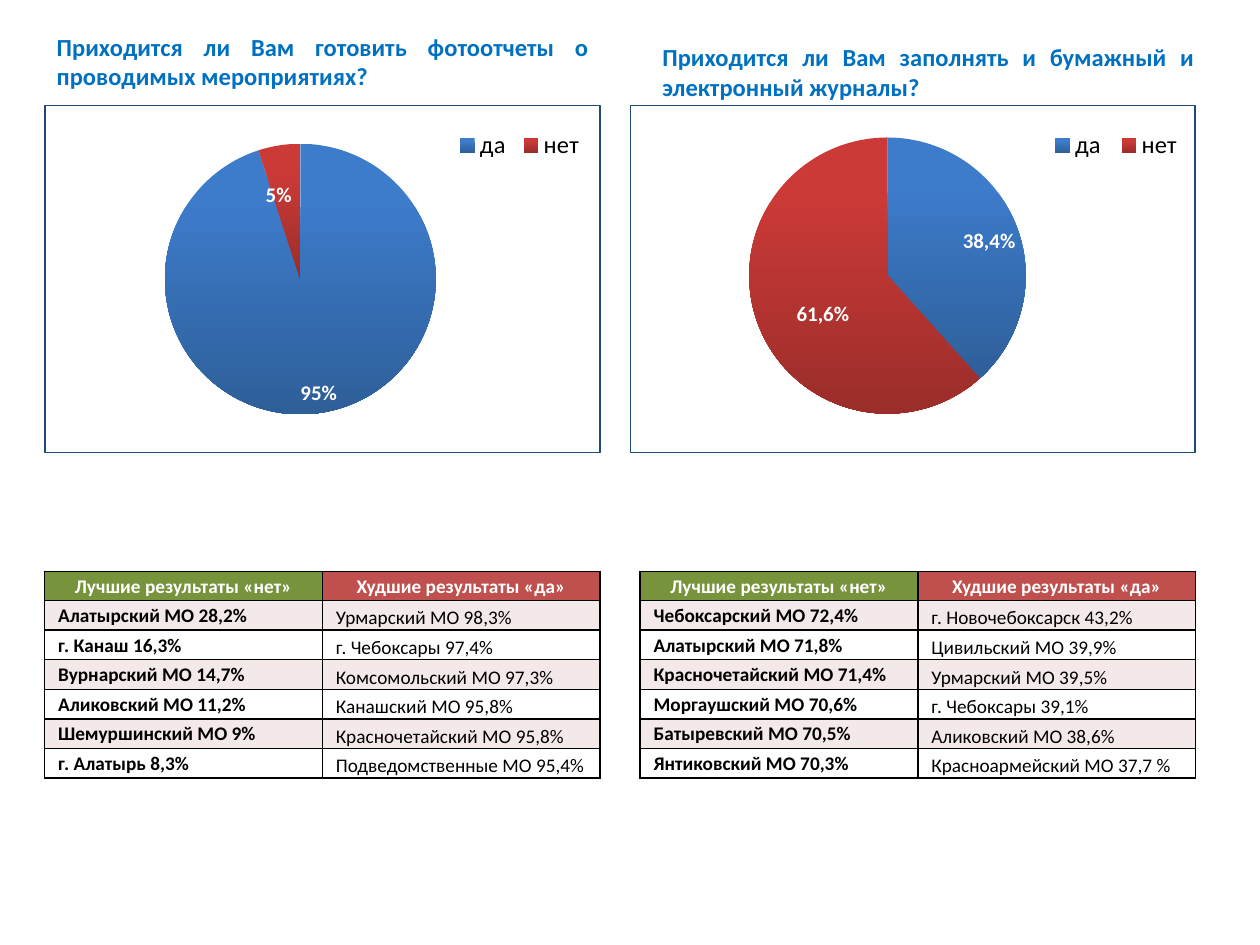
from lxml import etree
from pptx import Presentation
from pptx.chart.data import CategoryChartData
from pptx.dml.color import RGBColor
from pptx.enum.chart import XL_CHART_TYPE, XL_LABEL_POSITION, XL_LEGEND_POSITION
from pptx.enum.text import PP_ALIGN
from pptx.oxml import parse_xml
from pptx.oxml.ns import nsdecls, qn
from pptx.util import Pt

PIE = XL_CHART_TYPE.PIE
LABEL_POSITIONS = (XL_LABEL_POSITION.INSIDE_END, XL_LABEL_POSITION.CENTER)
LEGEND_TOP = XL_LEGEND_POSITION.TOP
JUSTIFY, CENTER, LEFT = PP_ALIGN.JUSTIFY, PP_ALIGN.CENTER, PP_ALIGN.LEFT

BLACK = RGBColor(0x00, 0x00, 0x00)
WHITE = RGBColor(0xFF, 0xFF, 0xFF)
TITLE_BLUE = RGBColor(0x00, 0x70, 0xC0)
BORDER_BLUE = RGBColor(0x1F, 0x49, 0x7D)
GREEN = RGBColor(0x77, 0x93, 0x3C)
RED = RGBColor(0xC0, 0x50, 0x4D)
BAND = RGBColor(0xF4, 0xE9, 0xE9)
SLICE_GRADIENTS = [
    (RGBColor(0x3D, 0x7B, 0xCB), RGBColor(0x2E, 0x5F, 0x99)),
    (RGBColor(0xCB, 0x3A, 0x37), RGBColor(0x9B, 0x2D, 0x2A)),
]


class SlideBuilder:
    def __init__(self, slide, font_name):
        self.slide = slide
        self.font_name = font_name

    def style_font(self, font, size, color, bold=False):
        font.name = self.font_name
        font.size = Pt(size)
        font.bold = bold
        font.color.rgb = color

    def add_run(self, paragraph, text, size, color, bold=False):
        run = paragraph.add_run()
        run.text = text
        self.style_font(run.font, size, color, bold)

    def add_title(self, left, top, text):
        shape = self.slide.shapes.add_textbox(Pt(left), Pt(top), Pt(318.2), Pt(50.4))
        shape.text_frame.word_wrap = True
        paragraph = shape.text_frame.paragraphs[0]
        paragraph.alignment = JUSTIFY
        self.add_run(paragraph, text, 14, TITLE_BLUE, True)

    def add_pie(self, left, width, values, number_format, plot, legend, offsets, texts=None):
        """Label with the given texts, or with computed percentages."""
        data = CategoryChartData(number_format=number_format.rstrip("%"))
        data.categories = ["да", "нет"]
        data.add_series("Series 1", values)
        chart = self.slide.shapes.add_chart(
            PIE, Pt(left), Pt(60), Pt(width), Pt(199), data).chart
        chart.has_title = False
        self.style_font(chart.font, 18, BLACK)
        chart.has_legend = True
        chart.legend.position = LEGEND_TOP
        chart.legend.include_in_layout = False
        self.style_font(chart.legend.font, 14, BLACK)

        series = chart.plots[0].series[0]
        labels = series.data_labels
        labels.show_percentage = True
        labels.show_value = False
        labels.number_format = number_format
        labels.number_format_is_linked = False
        self.style_font(labels.font, 12, WHITE, True)
        for index, (start, end) in enumerate(SLICE_GRADIENTS):
            point = series.points[index]
            fill = point.format.fill
            fill.gradient()
            fill.gradient_angle = 270
            for stop, color, place in zip(fill.gradient_stops, (start, end), (0.2, 1)):
                stop.color.rgb = color
                stop.position = place
            label = point.data_label
            if texts:
                paragraph = label.text_frame.paragraphs[0]
                self.add_run(paragraph, texts[index], 12, WHITE, True)
            else:
                self.style_font(label.font, 12, WHITE, True)
            label.position = LABEL_POSITIONS[index]

        space = chart.element
        for label, offset in zip(space.iter(qn("c:dLbl")), offsets):
            label.find(qn("c:showVal")).set("val", "0")
            label.find(qn("c:showPercent")).set("val", "1")
            self.set_layout(label, 1, zip("xy", offset))
        edges = [("xMode", "edge"), ("yMode", "edge")]
        plot_area = next(space.iter(qn("c:plotArea")))
        self.set_layout(plot_area, 0, [("layoutTarget", "inner"), *edges, *zip("xywh", plot)])
        legend_element = next(space.iter(qn("c:legend")))
        self.set_layout(legend_element, 1, [*edges, *zip("xywh", legend)])
        space.find(qn("c:chart")).addnext(parse_xml(
            f'<c:spPr {nsdecls("c", "a")}><a:noFill/><a:ln w="{Pt(0.75)}"><a:solidFill>'
            f'<a:srgbClr val="{BORDER_BLUE}"/></a:solidFill></a:ln></c:spPr>'))

    def set_layout(self, element, index, settings):
        """Give a chart part a manual layout, as its child at index."""
        for old in element.findall(qn("c:layout")):
            element.remove(old)
        layout = parse_xml(f'<c:layout {nsdecls("c")}><c:manualLayout/></c:layout>')
        for name, value in settings:
            etree.SubElement(layout[0], qn(f"c:{name}")).set("val", str(value))
        element.insert(index, layout)

    def add_table(self, left, top, width, height, rows):
        table = self.slide.shapes.add_table(
            len(rows), 2, Pt(left), Pt(top), Pt(width), Pt(height)).table
        for row_index, row in enumerate(rows):
            for column_index, text in enumerate(row):
                cell = table.cell(row_index, column_index)
                header, best = row_index == 0, column_index == 0
                if header:
                    fill = GREEN if best else RED
                else:
                    fill = BAND if row_index % 2 else WHITE
                cell.fill.solid()
                cell.fill.fore_color.rgb = fill
                cell.margin_left = Pt(5.2 if header else 7.7)
                cell.margin_right = Pt(5.2)
                cell.margin_top = Pt(0 if header or best else 0.7)
                cell.margin_bottom = 0
                paragraph = cell.text_frame.paragraphs[0]
                paragraph.alignment = CENTER if header else LEFT
                paragraph.line_spacing = 1.15 if header or best else Pt(16.2)
                self.add_run(paragraph, text, 11, WHITE if header else BLACK, header or best)
                self.add_borders(cell)

    def add_borders(self, cell):
        properties = cell._tc.get_or_add_tcPr()
        for index, side in enumerate(("lnL", "lnR", "lnT", "lnB")):
            properties.insert(index, parse_xml(
                f'<a:{side} {nsdecls("a")} w="{Pt(1)}"><a:solidFill>'
                f'<a:srgbClr val="{BLACK}"/></a:solidFill></a:{side}>'))


HEADER = ("Лучшие результаты «нет»", "Худшие результаты «да»")
PHOTO_ROWS = [
    HEADER,
    ("Алатырский МО 28,2%", "Урмарский МО 98,3%"),
    ("г. Канаш 16,3%", "г. Чебоксары 97,4%"),
    ("Вурнарский МО 14,7%", "Комсомольский МО 97,3%"),
    ("Аликовский МО 11,2%", "Канашский МО 95,8%"),
    ("Шемуршинский МО 9%", "Красночетайский МО 95,8%"),
    ("г. Алатырь 8,3%", "Подведомственные МО 95,4%"),
]
JOURNAL_ROWS = [
    HEADER,
    ("Чебоксарский МО 72,4%", "г. Новочебоксарск 43,2%"),
    ("Алатырский МО 71,8%", "Цивильский МО 39,9%"),
    ("Красночетайский МО 71,4%", "Урмарский МО 39,5%"),
    ("Моргаушский МО 70,6%", "г. Чебоксары 39,1%"),
    ("Батыревский МО 70,5%", "Аликовский МО 38,6%"),
    ("Янтиковский МО 70,3%", "Красноармейский МО 37,7 %"),
]


def main():
    presentation = Presentation()
    presentation.slide_width, presentation.slide_height = Pt(720), Pt(540)
    slide = presentation.slides.add_slide(presentation.slide_layouts[6])
    builder = SlideBuilder(slide, "Calibri")

    builder.add_title(25.3, 14.8, "Приходится ли Вам готовить фотоотчеты о проводимых мероприятиях?")
    builder.add_pie(25.3, 318, (95, 5), "0%", (0.21, 0.11, 0.5, 0.78),
                    (0.73, 0.06, 0.25, 0.11), ((0.03, 0), (-0.02, -0.05)))
    builder.add_title(371.4, 20.6, "Приходится ли Вам заполнять и бумажный и электронный журналы?")
    builder.add_pie(360, 323.3, (38.4, 61.6), "0.0%", (0.21, 0.09, 0.49, 0.8),
                    (0.73, 0.06, 0.26, 0.11), ((0.01, 0), (0, 0.04)), ("38,4%", "61,6%"))
    for left, rows in ((25.5, PHOTO_ROWS), (365.8, JOURNAL_ROWS)):
        builder.add_table(left, 326.5, 317.4, 116.6, rows)

    presentation.save("out.pptx")


if __name__ == "__main__":
    main()
